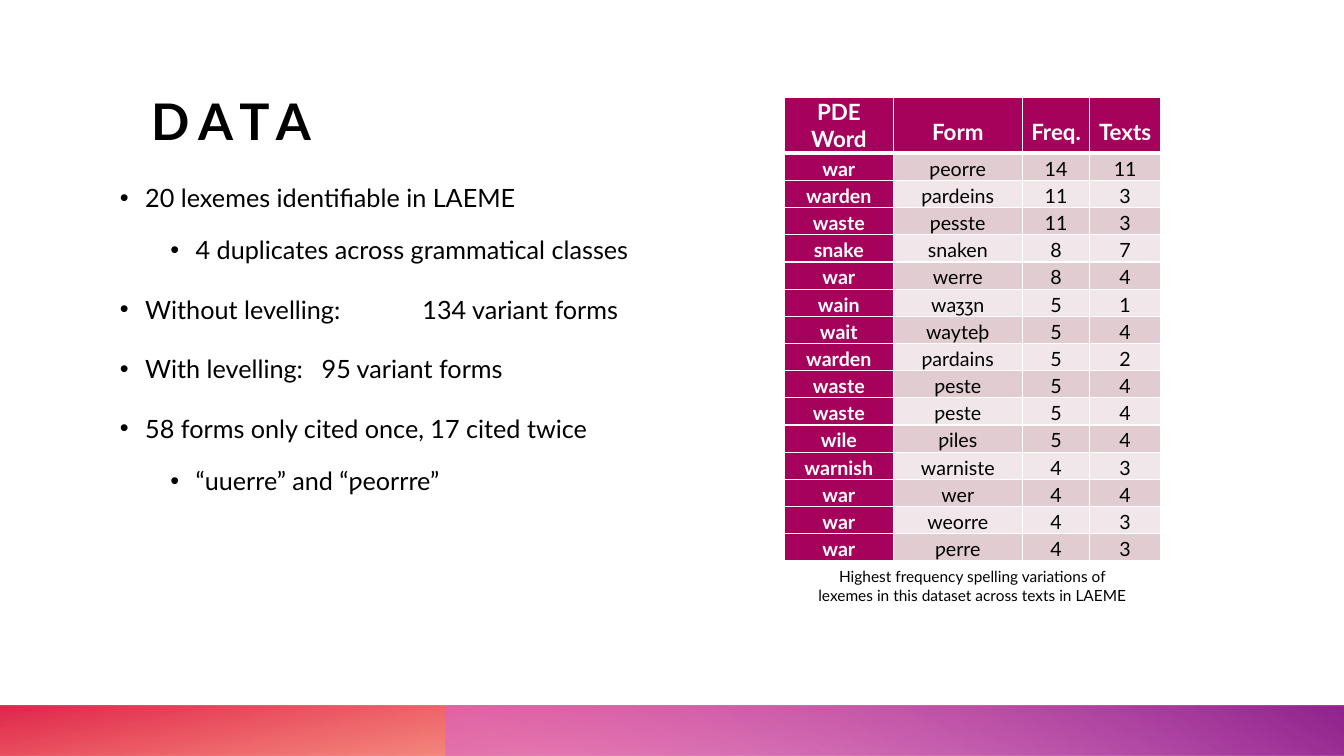
from pptx import Presentation
from pptx.dml.color import RGBColor
from pptx.enum.shapes import MSO_SHAPE
from pptx.enum.text import MSO_ANCHOR, PP_ALIGN
from pptx.oxml import parse_xml
from pptx.oxml.ns import nsdecls
from pptx.util import Inches, Pt

FONT = "Lato"
COLORS = {
    "text": "000000", "white": "FFFFFF", "head": "A6025C",
    "dark": "E1CCD2", "light": "F1E7EA", "flame": "FE4A00",
    "red": "DA002F", "pink": "D861D4", "plum": "92248E",
}
POINTS = [
    (0, "20 lexemes identifiable in LAEME"),
    (1, "4 duplicates across grammatical classes"),
    (0, "Without levelling:\t134 variant forms"),
    (0, "With levelling:\t95 variant forms"),
    (0, "58 forms only cited once, 17 cited twice"),
    (1, "“uuerre” and “ƿeorrre”"),
]
WIDTHS = [1.08, 1.28, 0.67, 0.7]
ROWS = [
    ("PDE Word", "Form", "Freq.", "Texts"),
    ("war", "ƿeorre", 14, 11),
    ("warden", "ƿardeins", 11, 3),
    ("waste", "ƿesste", 11, 3),
    ("snake", "snaken", 8, 7),
    ("war", "werre", 8, 4),
    ("wain", "waȝȝn", 5, 1),
    ("wait", "wayteþ", 5, 4),
    ("warden", "ƿardains", 5, 2),
    ("waste", "ƿeste", 5, 4),
    ("waste", "ƿeste", 5, 4),
    ("wile", "ƿiles", 5, 4),
    ("warnish", "warniste", 4, 3),
    ("war", "wer", 4, 4),
    ("war", "weorre", 4, 3),
    ("war", "ƿerre", 4, 3),
]


def style(para, size, color="text", bold=False):
    """Set the font of a whole paragraph."""
    font = para.font
    font.name, font.size, font.bold = FONT, Pt(size), bold
    font.color.rgb = RGBColor.from_string(COLORS[color])


def add_bar(slide, left, width, stops, angle, turn=0):
    """Draw a flipped footer bar with a translucent gradient."""
    bar = slide.shapes.add_shape(
        MSO_SHAPE.RECTANGLE, Inches(left), Inches(7), Inches(width), Inches(0.5))
    bar.shadow.inherit = False
    bar.line.fill.background()
    bar.rotation = turn
    props = bar._element.spPr
    props.xfrm.set("flipH", "1")
    marks = "".join(
        f'<a:gs pos="{pos * 1000}"><a:srgbClr val="{COLORS[name]}">'
        f'<a:alpha val="{alpha * 1000}"/></a:srgbClr></a:gs>'
        for pos, name, alpha in stops)
    props.prstGeom.addnext(parse_xml(
        f'<a:gradFill {nsdecls("a")} rotWithShape="1"><a:gsLst>{marks}</a:gsLst>'
        f'<a:lin ang="{angle * 60000}" scaled="0"/></a:gradFill>'))


def add_box(slide, left, top, width, height, inset=True):
    """Add a wrapping text box and return its text frame."""
    frame = slide.shapes.add_textbox(
        Inches(left), Inches(top), Inches(width), Inches(height)).text_frame
    frame.word_wrap = True
    if not inset:
        frame.margin_left = frame.margin_right = 0
        frame.margin_top = frame.margin_bottom = 0
    return frame


def add_title(slide, text):
    """Add the widely spaced title."""
    frame = add_box(slide, 1.5, 0.87, 11.2, 0.62, inset=False)
    frame.vertical_anchor = MSO_ANCHOR.BOTTOM
    para = frame.paragraphs[0]
    para.text = text
    style(para, 36, bold=True)
    para.runs[0].font._element.set("spc", "700")


def add_points(slide):
    """Add the bulleted list on two levels."""
    frame = add_box(slide, 1.19, 1.66, 11.51, 4.98, inset=False)
    for i, (level, text) in enumerate(POINTS):
        para = frame.add_paragraph() if i else frame.paragraphs[0]
        para.text, para.level = text, level
        para.line_spacing = 1.5
        para.space_before = Pt(5 if level else 10)
        style(para, 18)
        props = para._p.get_or_add_pPr()
        props.set("marL", str(Inches(0.25 + 0.5 * level)))
        props.set("indent", str(Inches(-0.25)))
        props.set("defTabSz", str(Inches(1)))
        mark = parse_xml(f'<a:buChar {nsdecls("a")} char="•"/>')
        face = parse_xml(f'<a:buFont {nsdecls("a")} typeface="Arial"/>')
        props.find("{*}defRPr").addprevious(face)
        face.addnext(mark)


def add_edges(cell, top):
    """Draw the white rules around a cell, heavy under the header."""
    props = cell._tc.get_or_add_tcPr()
    for side in "LRTB":
        width = Pt(3 if top and side == "B" else 1)
        props.append(parse_xml(
            f'<a:ln{side} {nsdecls("a")} w="{width}"><a:solidFill>'
            f'<a:srgbClr val="{COLORS["white"]}"/></a:solidFill></a:ln{side}>'))


def fill_cell(cell, row, col, value):
    """Write and colour one cell of the table."""
    top = row == 0
    strong = top or col == 0
    cell.margin_left = cell.margin_right = Inches(0.07)
    cell.margin_top = cell.margin_bottom = 0
    cell.vertical_anchor = MSO_ANCHOR.MIDDLE
    add_edges(cell, top)
    shade = "head" if strong else "dark" if row % 2 else "light"
    cell.fill.solid()
    cell.fill.fore_color.rgb = RGBColor.from_string(COLORS[shade])
    para = cell.text_frame.paragraphs[0]
    para.text = str(value)
    para.alignment = PP_ALIGN.CENTER
    para.space_after = Pt(8)
    if not top:
        para.line_spacing = 1.15
    elif col:
        para.line_spacing = 1.5
    style(para, 16 if top else 14, "white" if strong else "text", strong)


def add_forms(slide):
    """Add the table of spelling forms."""
    table = slide.shapes.add_table(
        len(ROWS), len(WIDTHS), Inches(7.78), Inches(0.97),
        Inches(sum(WIDTHS)), Inches(4.6)).table
    for col, width in enumerate(WIDTHS):
        table.columns[col].width = Inches(width)
    for row, values in enumerate(ROWS):
        table.rows[row].height = Inches(0.27 if row else 0.55)
        for col, value in enumerate(values):
            fill_cell(table.cell(row, col), row, col, value)


def add_caption(slide, text):
    """Add the centred caption below the table."""
    para = add_box(slide, 7.96, 5.58, 3.37, 0.47).paragraphs[0]
    para.text = text
    para.alignment = PP_ALIGN.CENTER
    style(para, 11)


def main():
    """Build the slide and save it."""
    deck = Presentation()
    deck.slide_width, deck.slide_height = Inches(13.33), Inches(7.5)
    slide = deck.slides.add_slide(deck.slide_layouts[6])
    add_bar(slide, 0, 13.33, [(14, "flame", 28), (100, "red", 85)], 100, 180)
    add_bar(slide, 4.42, 8.91, [(9, "pink", 55), (99, "plum", 100)], 240)
    add_title(slide, "DATA")
    add_points(slide)
    add_forms(slide)
    add_caption(slide, "Highest frequency spelling variations of "
                       "lexemes in this dataset across texts in LAEME")
    deck.save("out.pptx")


if __name__ == "__main__":
    main()
